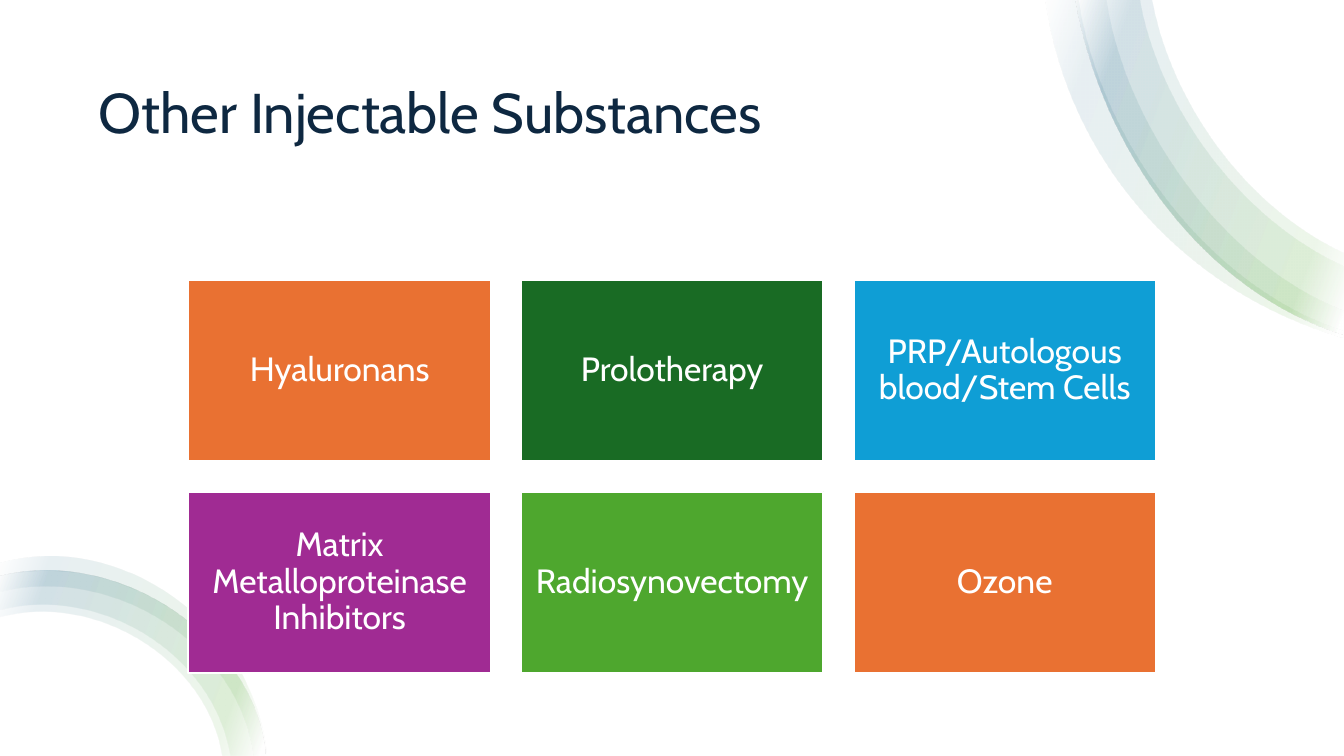
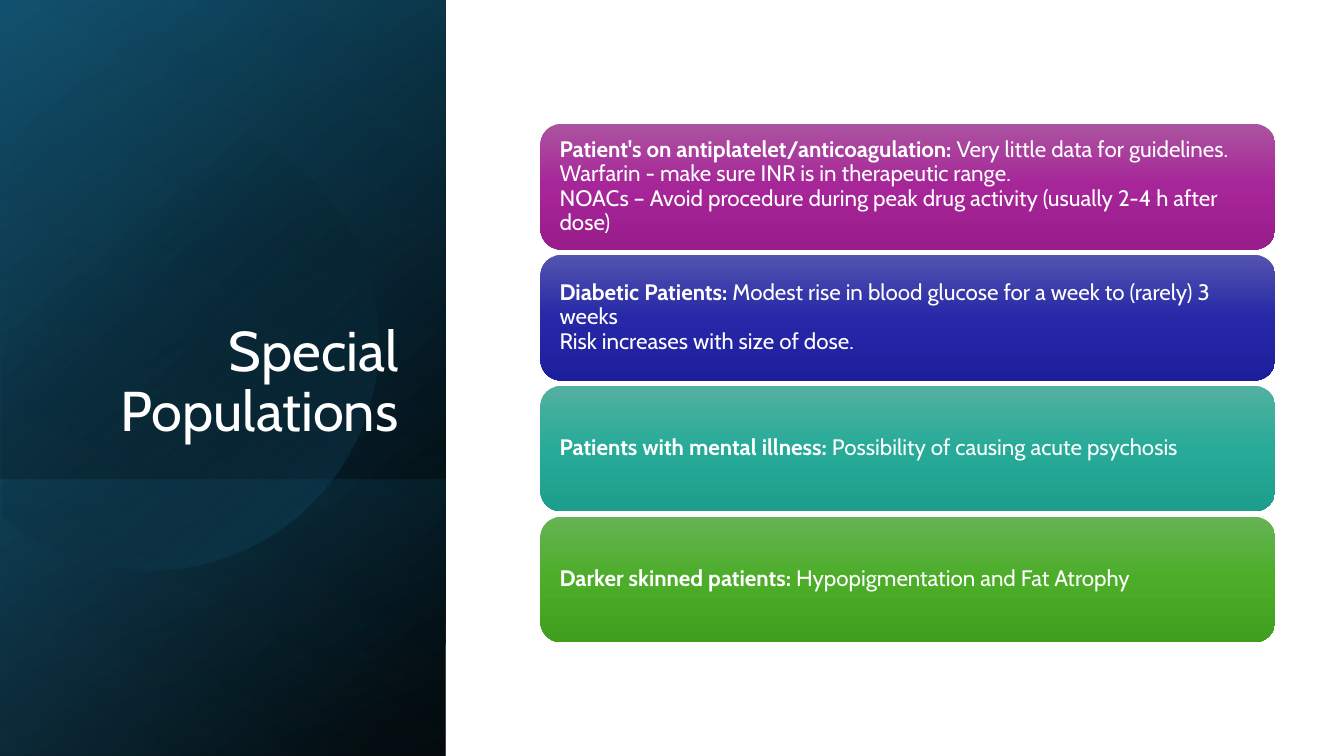
"""Build two slides: a grid of injectable substances and a list of special populations."""
import math

import lxml.etree
import pptx
import pptx.dml.color
import pptx.enum.shapes
import pptx.enum.text
import pptx.oxml.ns
import pptx.util

Cm, Pt = pptx.util.Cm, pptx.util.Pt
RGB = pptx.dml.color.RGBColor.from_string
SHAPE = pptx.enum.shapes.MSO_SHAPE
ALIGN = pptx.enum.text.PP_ALIGN
ANCHOR = pptx.enum.text.MSO_ANCHOR
INCH = Cm(2.54)
FONT = "Cabin"
HUES = {
    "white": "FFFFFF", "black": "000000", "navy": "0E2841", "teal": "156082",
    "deep": "104862", "sky": "46B1E1", "orange": "E97132", "forest": "196B24",
    "blue": "0F9ED5", "purple": "A02B93", "green": "4EA72E",
}


def paint(shape, angle, stops):
    """Fill a shape with a gradient of (position, hex, opacity) stops and no line."""
    shape.shadow.inherit = False
    shape.line.fill.background()
    shape.fill.gradient()
    fill = shape.fill._xPr.find(pptx.oxml.ns.qn("a:gradFill"))
    for child in list(fill):
        fill.remove(child)
    tag = pptx.oxml.ns.qn
    row = lxml.etree.SubElement(fill, tag("a:gsLst"))
    for place, hue, alpha in stops:
        stop = lxml.etree.SubElement(row, tag("a:gs"), pos=str(place * 1000))
        color = lxml.etree.SubElement(stop, tag("a:srgbClr"), val=hue)
        if alpha < 100:
            lxml.etree.SubElement(color, tag("a:alpha"), val=str(alpha * 1000))
    lxml.etree.SubElement(fill, tag("a:lin"), ang=str(angle * 60000), scaled="0")


def write(shape, text, size, hue, align, anchor, inset, bold=""):
    """Write one paragraph, with an optional bold lead and line breaks."""
    frame = shape.text_frame
    frame.word_wrap = True
    frame.vertical_anchor = anchor
    frame.margin_left = frame.margin_right = Cm(inset)
    frame.margin_top = frame.margin_bottom = Cm(0.13)
    para = frame.paragraphs[0]
    para.alignment = align
    para.line_spacing = 0.9
    para.font.name = FONT
    para.font.size = Pt(size)
    para.font.color.rgb = RGB(HUES[hue])
    if bold:
        lead = para.add_run()
        lead.text = bold + " "
        lead.font.bold = True
    for i, line in enumerate(text.split("\n")):
        if i:
            para.add_line_break()
        para.add_run().text = line


deck = pptx.Presentation()
deck.slide_width, deck.slide_height = Cm(33.87), Cm(19.05)
first, second = [deck.slides.add_slide(deck.slide_layouts[6]) for _ in range(2)]

# Each ribbon lies between two cubic curves, in inches.
rim = [(10.67, 0), (10.93, 1.5), (11.95, 2.9), (13.33, 3.32)]
arch = [(0, 5.72), (1.25, 5.42), (2.55, 6.4), (2.63, 7.5)]
ribbons = [
    ([(10.37, 0), (10.59, 1.6), (11.75, 2.9), (13.33, 3.35)],
     [(10.7, 0), (10.9, 1.35), (11.95, 2.83), (13.33, 3.28)]),
    (rim, [(11.43, 0), (11.62, 1.02), (12.35, 2.05), (13.33, 2.51)]),
    (rim, [(10.98, 0), (11.15, 1.2), (12.1, 2.6), (13.33, 3.08)]),
    (rim, [(11.31, 0), (11.5, 1.07), (12.3, 2.17), (13.33, 2.64)]),
    (arch, [(0, 6.13), (0.95, 5.87), (2.05, 6.55), (2.2, 7.5)]),
    (arch, [(0, 6.06), (1, 5.8), (2.12, 6.5), (2.28, 7.5)]),
    (arch, [(0, 5.88), (1.15, 5.6), (2.37, 6.42), (2.51, 7.5)]),
    ([(0, 5.59), (1.2, 5.25), (2.52, 6.2), (2.64, 7.5)], arch),
]
fade = [(2, HUES["white"], 10), (16, HUES["green"], 10),
        (85, HUES["teal"], 10), (100, HUES["white"], 10)]
steps = 32
for outer, inner in ribbons:
    edge = []
    for curve in (outer, inner[::-1]):
        for i in range(steps + 1):
            t = i / steps
            parts = [math.comb(3, k) * t ** k * (1 - t) ** (3 - k) for k in range(4)]
            edge.append([sum(w * p[axis] for w, p in zip(parts, curve)) * INCH
                         for axis in (0, 1)])
    pen = first.shapes.build_freeform(*edge[0])
    pen.add_line_segments(edge[1:], close=True)
    paint(pen.convert_to_shape(), 200, fade)

cards = [
    ("Hyaluronans", "orange"), ("Prolotherapy", "forest"),
    ("PRP/Autologous blood/Stem Cells", "blue"),
    ("Matrix Metalloproteinase Inhibitors", "purple"),
    ("Radiosynovectomy", "green"), ("Ozone", "orange"),
]
for i, (text, hue) in enumerate(cards):
    row, col = divmod(i, 3)
    card = first.shapes.add_shape(SHAPE.RECTANGLE, Cm(4.75 + 8.38 * col),
                                  Cm(7.06 + 5.33 * row), Cm(7.62), Cm(4.57))
    card.shadow.inherit = False
    card.fill.solid()
    card.fill.fore_color.rgb = RGB(HUES[hue])
    card.line.color.rgb = RGB(HUES["white"])
    card.line.width = Pt(1.5)
    write(card, text, 24, "white", ALIGN.CENTER, ANCHOR.MIDDLE, 0.25)

black, teal = HUES["black"], HUES["teal"]
panels = [
    (0, 19.05, 230, [(8, black, 100), (100, HUES["deep"], 100)]),
    (0, 19.05, 240, [(0, black, 0), (99, teal, 46)]),
    (12.09, 6.96, 70, [(2, teal, 29), (100, black, 30)]),
    (0, 19.05, 120, [(0, black, 0), (99, HUES["sky"], 11)]),
]
for top, high, angle, stops in panels:
    panel = second.shapes.add_shape(SHAPE.RECTANGLE, 0, Cm(top), Cm(11.23), Cm(high))
    paint(panel, angle, stops)

disc = [(Cm(3.78 + 5.77 * math.cos(math.radians(a))),
         Cm(8.6 + 5.77 * math.sin(math.radians(a)))) for a in range(-130, 131, 4)]
pen = second.shapes.build_freeform(*disc[0])
pen.add_line_segments(disc[1:], close=True)
paint(pen.convert_to_shape(), 50, [(29, black, 0), (100, teal, 43)])

groups = [
    ("Patient's on antiplatelet/anticoagulation:",
     "Very little data for guidelines.\n"
     "Warfarin - make sure INR is in therapeutic range.\n"
     "NOACs – Avoid procedure during peak drug activity (usually 2-4 h after dose)",
     ("AC53A0", "A62598", "991C8B")),
    ("Diabetic Patients:",
     "Modest rise in blood glucose for a week to (rarely) 3 weeks\n"
     "Risk increases with size of dose.",
     ("5354AE", "2628A8", "1D1E9B")),
    ("Patients with mental illness:", "Possibility of causing acute psychosis",
     ("53B0A1", "27AB98", "1D9D8B")),
    ("Darker skinned patients:", "Hypopigmentation and Fat Atrophy",
     ("66B354", "4BAD28", "409F1E")),
]
for i, (lead, text, tones) in enumerate(groups):
    bar = second.shapes.add_shape(SHAPE.ROUNDED_RECTANGLE, Cm(13.62), Cm(3.12 + 3.3 * i),
                                  Cm(18.52), Cm(3.17))
    paint(bar, 90, [(50 * k, tone, 100) for k, tone in enumerate(tones)])
    write(bar, text, 16, "white", ALIGN.LEFT, ANCHOR.MIDDLE, 0.33, lead)

titles = [
    (first, "Other Injectable Substances", (2.24, 1.27, 29.39, 3.3),
     "navy", ALIGN.LEFT, ANCHOR.MIDDLE),
    (second, "Special Populations", (1.63, 4.67, 8.66, 6.65),
     "white", ALIGN.RIGHT, ANCHOR.BOTTOM),
]
for slide, text, place, hue, align, anchor in titles:
    box = slide.shapes.add_textbox(*[Cm(v) for v in place])
    write(box, text, 40, hue, align, anchor, 0.25)

deck.save("out.pptx")
